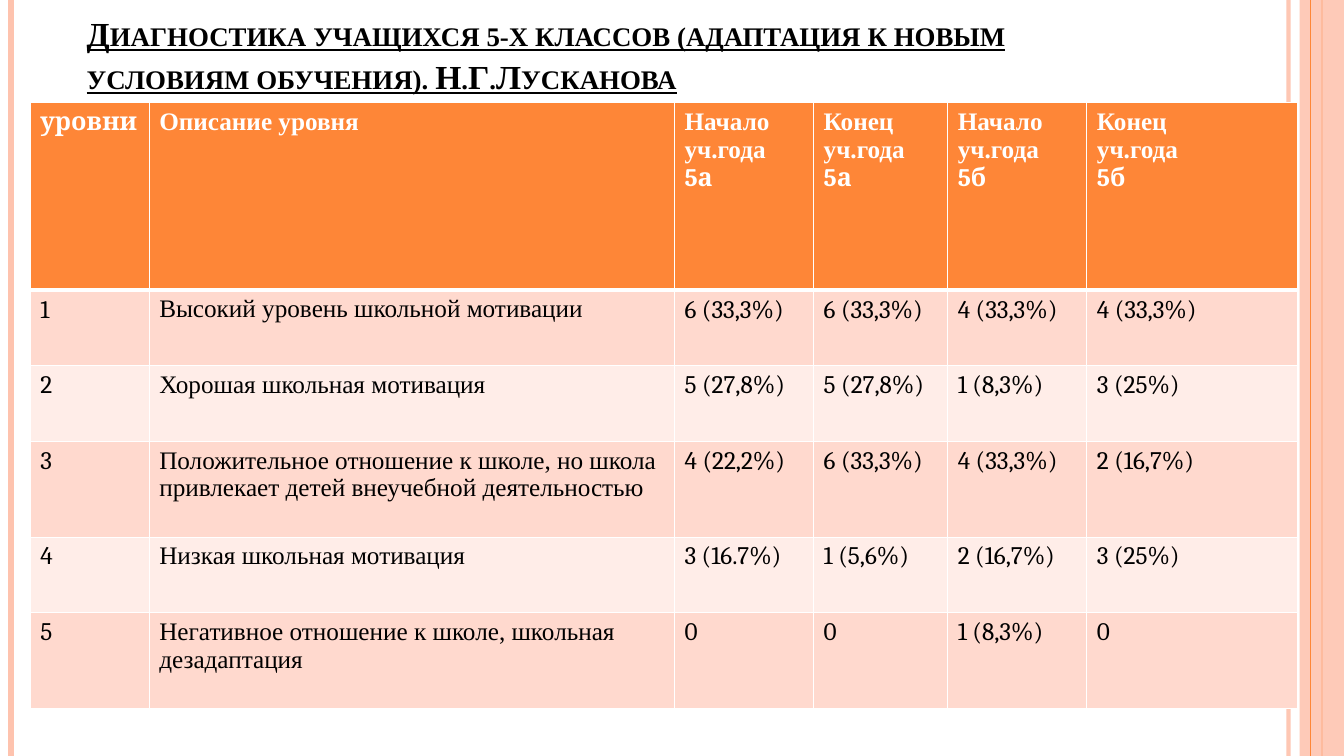
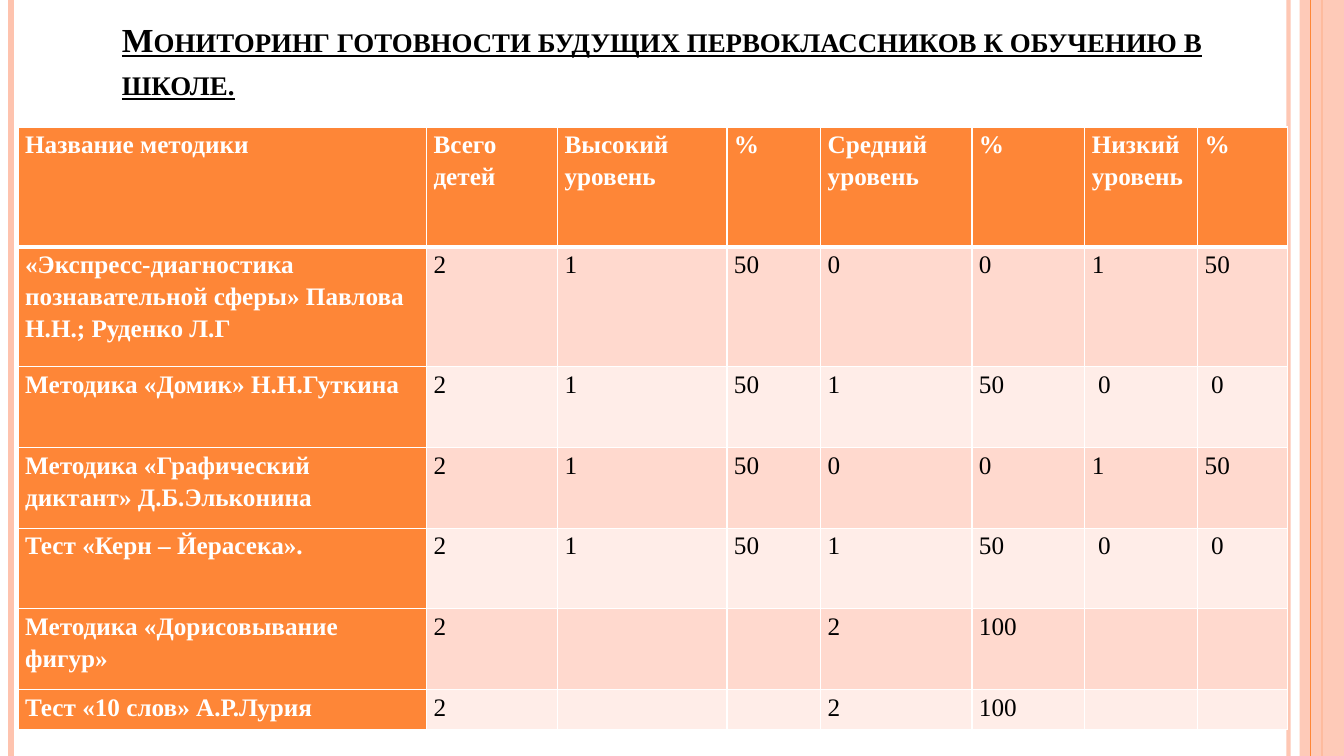
import pptx
import pptx.dml.color
import pptx.enum.shapes
import pptx.enum.text
import pptx.oxml
import pptx.oxml.ns
import pptx.util
from pptx.util import Inches

# Shared colours and fonts
ORANGE = pptx.dml.color.RGBColor(0xFE, 0x86, 0x37)
PEACH = pptx.dml.color.RGBColor(0xFE, 0xC3, 0xAE)
ROW_DARK = pptx.dml.color.RGBColor(0xFF, 0xD9, 0xCE)
ROW_LIGHT = pptx.dml.color.RGBColor(0xFF, 0xED, 0xE8)
WHITE = pptx.dml.color.RGBColor(0xFF, 0xFF, 0xFF)
BLACK = pptx.dml.color.RGBColor(0, 0, 0)
SERIF = "Times New Roman"
CAMBRIA = "Cambria"
TITLE_SIZE = pptx.util.Pt(24)
TABLE_SIZE = pptx.util.Pt(18)
SLIDE_HEIGHT = 7.5

# Content
DIAGNOSTICS_TITLE = ("Диагностика учащихся 5-х классов (адаптация к новым "
                     "условиям обучения). Н.Г.Лусканова")
DIAGNOSTICS = [
    ["уровни", "Описание уровня", "Начало\nуч.года\n5а", "Конец\nуч.года\n5а",
     "Начало\nуч.года\n5б", "Конец\nуч.года\n5б"],
    ["1", "Высокий уровень школьной мотивации",
     "6 (33,3%)", "6 (33,3%)", "4 (33,3%)", "4 (33,3%)"],
    ["2", "Хорошая школьная мотивация",
     "5 (27,8%)", "5 (27,8%)", "1 (8,3%)", "3 (25%)"],
    ["3", "Положительное отношение к школе, но школа привлекает детей "
     "внеучебной деятельностью",
     "4 (22,2%)", "6 (33,3%)", "4 (33,3%)", "2 (16,7%)"],
    ["4", "Низкая школьная мотивация",
     "3 (16.7%)", "1 (5,6%)", "2 (16,7%)", "3 (25%)"],
    ["5", "Негативное отношение к школе, школьная дезадаптация",
     "0", "0", "1 (8,3%)", "0"],
]
READINESS_TITLE = "Мониторинг готовности будущих первоклассников к обучению в школе."
READINESS = [
    ["Название методики", "Всего детей", "Высокий уровень", "%",
     "Средний уровень", "%", "Низкий уровень", "%"],
    ["«Экспресс-диагностика познавательной сферы» Павлова Н.Н.; Руденко Л.Г",
     "2", "1", "50", "0", "0", "1", "50"],
    ["Методика «Домик» Н.Н.Гуткина", "2", "1", "50", "1", "50", " 0", " 0"],
    ["Методика «Графический диктант» Д.Б.Эльконина",
     "2", "1", "50", "0", "0", "1", "50"],
    ["Тест «Керн – Йерасека».", "2", "1", "50", "1", "50", " 0", " 0"],
    ["Методика «Дорисовывание фигур»", "2", "", "", "2", "100", "", ""],
    ["Тест «10 слов» А.Р.Лурия", "2", "", "", "2", "100", "", ""],
]


def set_alpha(fill_parent, percent):
    """Make the solid colour below an element partly transparent."""
    colour = next(fill_parent.iter(pptx.oxml.ns.qn("a:srgbClr")))
    alpha = colour.makeelement(pptx.oxml.ns.qn("a:alpha"), {"val": str(percent * 1000)})
    colour.append(alpha)


def add_vertical_line(slide, left, colour, width):
    line = slide.shapes.add_connector(
        pptx.enum.shapes.MSO_CONNECTOR.STRAIGHT,
        Inches(left), 0, Inches(left), Inches(SLIDE_HEIGHT))
    line.line.color.rgb = colour
    line.line.width = pptx.util.Pt(width)
    properties = line.element.spPr
    properties.append(properties.makeelement(pptx.oxml.ns.qn("a:effectLst"), {}))
    return line


def add_side_band(slide):
    band = slide.shapes.add_shape(
        pptx.enum.shapes.MSO_SHAPE.RECTANGLE,
        Inches(12.89), 0, Inches(0.44), Inches(SLIDE_HEIGHT))
    band.shadow.inherit = False
    band.fill.solid()
    band.fill.fore_color.rgb = PEACH
    band.line.fill.background()
    set_alpha(band.element.spPr, 87)
    return band


def decorate_layout(layout, slide):
    """Draw the edge stripes once and move them to the shared layout."""
    inner_line = add_vertical_line(slide, 12.78, PEACH, 3)
    set_alpha(inner_line.element.spPr, 93)
    stripes = [
        inner_line,
        add_vertical_line(slide, 0.11, PEACH, 4.5),
        add_vertical_line(slide, 13.11, ORANGE, 1.5),
        add_side_band(slide),
        add_vertical_line(slide, 13, ORANGE, 0.75),
    ]
    for stripe in stripes:
        layout.shapes.element.append(stripe.element)


def add_run(paragraph, text, size, font_name, colour, bold):
    run = paragraph.add_run()
    run.text = text
    run.font.size = size
    run.font.name = font_name
    run.font.color.rgb = colour
    run.font.bold = bold
    return run


def set_title(slide, text, left, top, width, height):
    title = slide.shapes.title
    title.left, title.top = Inches(left), Inches(top)
    title.width, title.height = Inches(width), Inches(height)
    frame = title.text_frame
    frame.word_wrap = True
    frame.auto_size = pptx.enum.text.MSO_AUTO_SIZE.NONE
    frame.vertical_anchor = pptx.enum.text.MSO_ANCHOR.BOTTOM
    paragraph = frame.paragraphs[0]
    paragraph.alignment = pptx.enum.text.PP_ALIGN.LEFT
    paragraph.line_spacing = 1.05
    run = add_run(paragraph, text, TITLE_SIZE, SERIF, BLACK, True)
    run.font.underline = True
    run.font.element.set("cap", "small") if hasattr(run.font, "element") else \
        paragraph.runs[0]._r.get_or_add_rPr().set("cap", "small")


def set_borders(cell, top, bottom):
    """White borders; the widths of the horizontal ones are given in points."""
    properties = cell._tc.get_or_add_tcPr()
    for side, width in (("L", 1), ("R", 1), ("T", top), ("B", bottom)):
        properties.append(pptx.oxml.parse_xml(
            f'<a:ln{side} {pptx.oxml.ns.nsdecls("a")} w="{pptx.util.Pt(width)}">'
            f'<a:solidFill><a:srgbClr val="{WHITE}"/></a:solidFill></a:ln{side}>'))


def fill_cell(cell, text, fonts, heading, fill, line_spacing):
    cell.fill.solid()
    cell.fill.fore_color.rgb = fill
    frame = cell.text_frame
    for index, line in enumerate(text.split("\n")):
        paragraph = frame.add_paragraph() if index else frame.paragraphs[0]
        paragraph.line_spacing = line_spacing
        if line:
            add_run(paragraph, line, TABLE_SIZE, fonts(index),
                    WHITE if heading else BLACK, heading)


def add_level_table(slide, rows, left, top, widths, heights, font_for,
                    heading_column=False, margins=None, line_spacing=1.0):
    frame = slide.shapes.add_table(
        len(rows), len(widths), Inches(left), Inches(top),
        Inches(sum(widths)), Inches(sum(heights)))
    table = frame.table
    for column, width in zip(table.columns, widths):
        column.width = Inches(width)
    for row, height in zip(table.rows, heights):
        row.height = Inches(height)
    for row_index, texts in enumerate(rows):
        band = ROW_DARK if row_index % 2 else ROW_LIGHT
        for column_index, text in enumerate(texts):
            cell = table.cell(row_index, column_index)
            heading = row_index == 0 or (heading_column and column_index == 0)
            if margins:
                cell.margin_left = cell.margin_right = Inches(margins[0])
                cell.margin_top = cell.margin_bottom = Inches(margins[1])
            set_borders(cell, 3 if row_index == 1 else 1, 3 if row_index == 0 else 1)
            fill_cell(cell, text,
                      lambda line: font_for(row_index, column_index, line),
                      heading, ORANGE if heading else band, line_spacing)


def diagnostics_font(row, column, line):
    """Descriptions and the first header lines are in Times, the rest in Cambria."""
    if column == 1 or (row == 0 and column > 1 and line < 2):
        return SERIF
    return CAMBRIA


def readiness_font(row, column, line):
    return SERIF


def main():
    presentation = pptx.Presentation()
    presentation.slide_width = Inches(13.33)
    presentation.slide_height = Inches(SLIDE_HEIGHT)
    layout = presentation.slide_layouts[5]

    # Slide 1: adaptation of the fifth grades
    slide = presentation.slides.add_slide(layout)
    decorate_layout(layout, slide)
    set_title(slide, DIAGNOSTICS_TITLE, 0.76, 0.12, 10.5, 0.88)
    add_level_table(slide, DIAGNOSTICS, 0.3, 1.02,
                    [1.18, 5.21, 1.38, 1.33, 1.38, 2.09],
                    [1.86, 0.75, 0.75, 0.95, 0.75, 0.95], diagnostics_font)

    # Slide 2: readiness of future first-graders
    slide = presentation.slides.add_slide(layout)
    set_title(slide, READINESS_TITLE, 1.11, 0.15, 11.5, 0.91)
    add_level_table(slide, READINESS, 0.18, 1.26,
                    [4.05, 1.3, 1.68, 0.93, 1.5, 1.12, 1.12, 0.89],
                    [1.19, 1.19, 0.8, 0.8, 0.8, 0.8, 0.4], readiness_font,
                    heading_column=True, margins=(0.07, 0), line_spacing=1.15)

    presentation.save("out.pptx")


if __name__ == "__main__":
    main()
